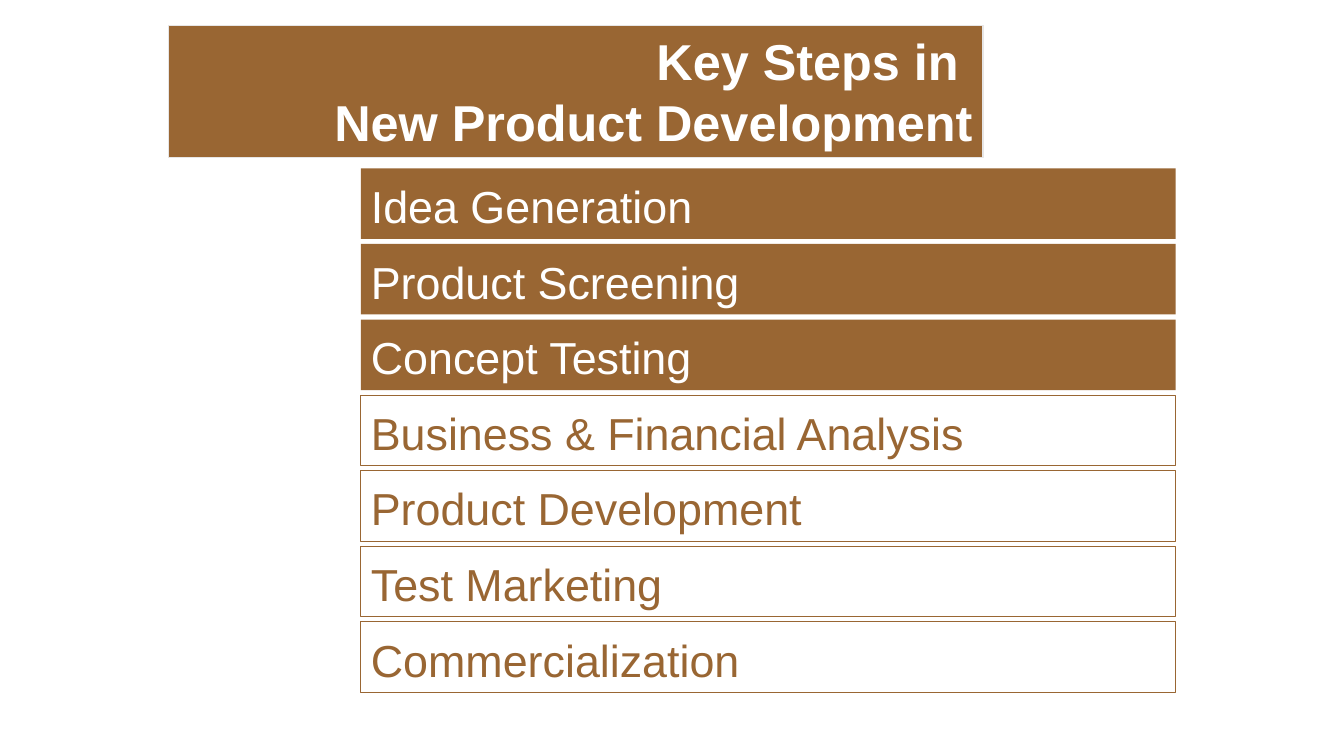
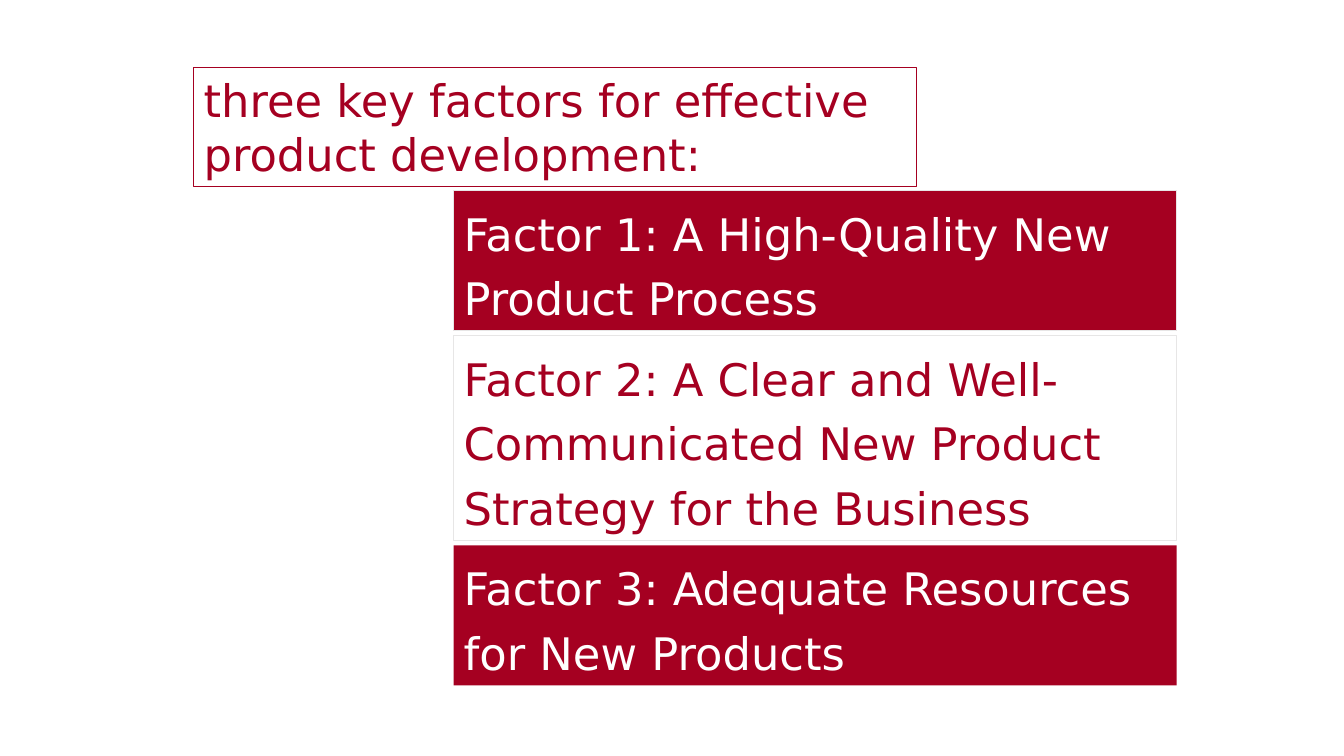
from pptx import Presentation
from pptx.dml.color import RGBColor
from pptx.enum.shapes import MSO_SHAPE
from pptx.enum.text import MSO_ANCHOR, MSO_AUTO_SIZE, PP_ALIGN
from pptx.util import Inches, Pt

BROWN, RED, WHITE, PALE = "996633", "A50021", "FFFFFF", "E7E6E6"
TITLE_ONLY = 5


def color(value):
    return RGBColor.from_string(value)


def style_box(box, place, text, fill, ink, line, font, spacing=1.0, align=PP_ALIGN.LEFT):
    """Place a title or rectangle, then give it its fill, outline and text."""
    for name, length in zip(("left", "top", "width", "height"), place):
        setattr(box, name, Inches(length))
    box.fill.solid()
    box.fill.fore_color.rgb = color(fill)
    if line:
        box.line.color.rgb = color(line)
        box.line.width = Pt(0.75)
    else:
        box.line.fill.background()
    frame = box.text_frame
    frame.text = text
    frame.word_wrap = True
    frame.auto_size = MSO_AUTO_SIZE.SHAPE_TO_FIT_TEXT
    frame.vertical_anchor = MSO_ANCHOR.TOP
    for para in frame.paragraphs:
        para.alignment = align
        para.line_spacing = spacing
        for span in para.runs:
            span.font.color.rgb = color(ink)
            for name, value in font.items():
                setattr(span.font, name, value)


deck = Presentation()
deck.slide_width, deck.slide_height = Inches(13.33), Inches(7.5)

slides = [
    {
        "title": "Key Steps in \nNew Product Development",
        "title_place": (1.67, 0.25, 8.08, 1.31),
        "title_style": {
            "fill": BROWN, "ink": WHITE, "line": PALE, "align": PP_ALIGN.RIGHT,
            "font": {"name": "Arial", "size": Pt(36), "bold": True},
        },
        "left": 3.58, "top": 1.67, "width": 8.08, "gap": 0.05, "spacing": 1.1,
        "font": {"name": "Arial", "size": Pt(32)},
        # text, height, fill, ink, line
        "bars": [
            (step, 0.7, BROWN, WHITE, None)
            for step in ("Idea Generation", "Product Screening", "Concept Testing")
        ] + [
            (step, 0.7, WHITE, BROWN, BROWN)
            for step in ("Business & Financial Analysis", "Product Development",
                         "Test Marketing", "Commercialization")
        ],
    },
    {
        "title": "three key factors for effective product development:",
        "title_place": (1.92, 0.67, 7.17, 1.18),
        "title_style": {
            "fill": WHITE, "ink": RED, "line": RED,
            "font": {"name": "DejaVu Sans", "size": Pt(32)},
        },
        "left": 4.5, "top": 1.89, "width": 7.17, "gap": 0.05, "spacing": 1.2,
        "font": {"name": "DejaVu Sans", "size": Pt(32)},
        "bars": [
            ("Factor 1: A High-Quality New Product Process", 1.39, RED, WHITE, PALE),
            ("Factor 2: A Clear and Well-Communicated New Product Strategy for the Business",
             2.03, WHITE, RED, PALE),
            ("Factor 3: Adequate Resources for New Products", 1.39, RED, WHITE, None),
        ],
    },
]

for content in slides:
    page = deck.slides.add_slide(deck.slide_layouts[TITLE_ONLY])
    style_box(page.shapes.title, content["title_place"], content["title"],
              **content["title_style"])
    top = content["top"]
    for text, height, fill, ink, line in content["bars"]:
        bar = page.shapes.add_shape(MSO_SHAPE.RECTANGLE, 0, 0, 0, 0)
        bar.shadow.inherit = False
        style_box(bar, (content["left"], top, content["width"], height), text,
                  fill, ink, line, content["font"], content["spacing"])
        top += height + content["gap"]

deck.save("out.pptx")
